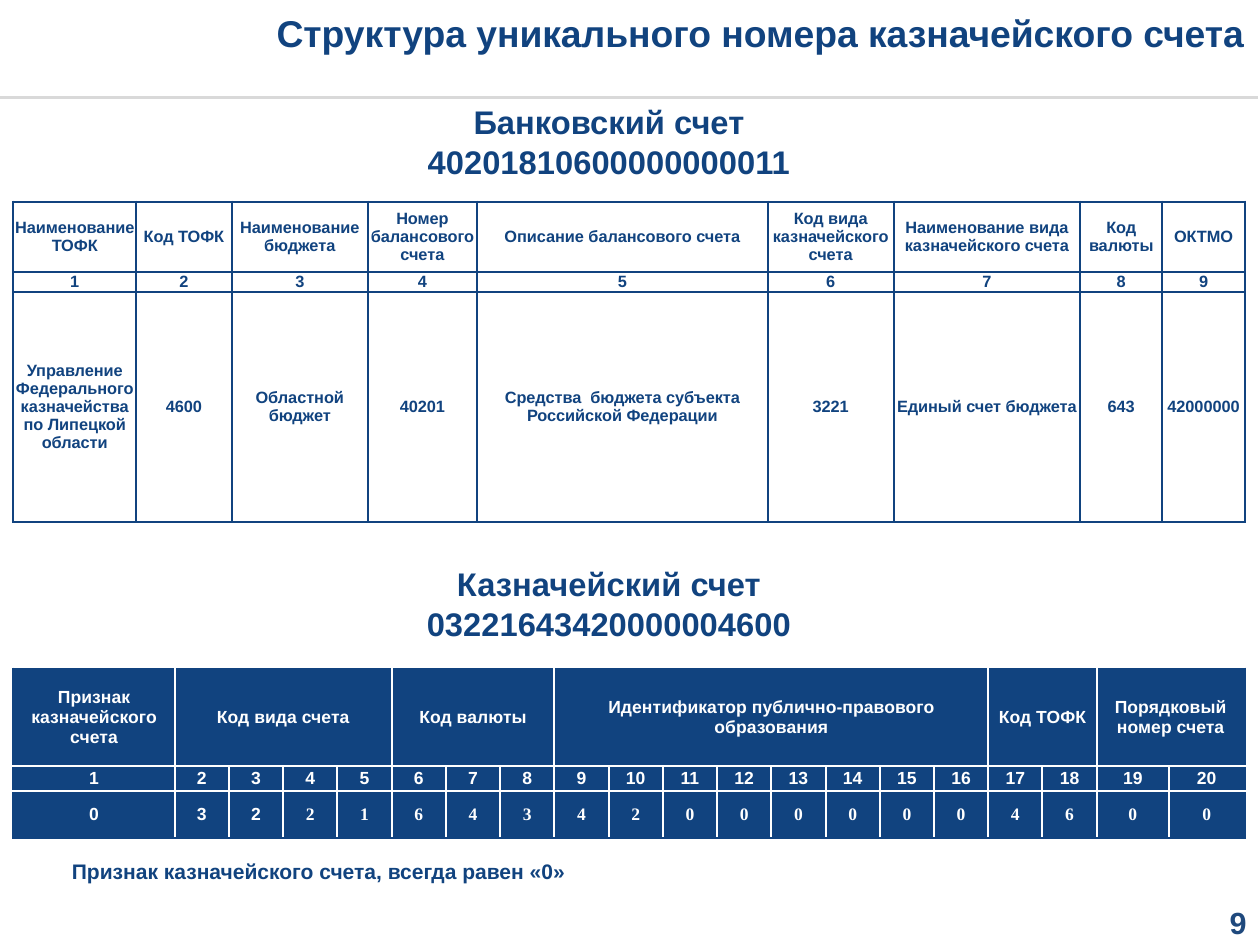
"""Build the slide on the structure of a treasury account number."""
from lxml.etree import SubElement
from pptx import Presentation
from pptx.dml.color import RGBColor
from pptx.enum.shapes import MSO_CONNECTOR
from pptx.enum.text import MSO_ANCHOR, PP_ALIGN
from pptx.oxml.ns import qn
from pptx.util import Inches, Pt

NAVY = RGBColor(0x11, 0x43, 0x7F)
PAGE_BLUE = RGBColor(0x1F, 0x49, 0x7D)
RULE_GREY = RGBColor(0xD9, 0xD9, 0xD9)
WHITE = RGBColor(0xFF, 0xFF, 0xFF)

SLIDE_WIDTH = 7.5
SLIDE_HEIGHT = SLIDE_WIDTH * 3 / 4
TABLE_LEFT, TABLE_WIDTH = 0.08, 7.33

BANK_WIDTHS = [0.73, 0.57, 0.81, 0.65, 1.73, 0.75, 1.11, 0.49, 0.49]
BANK_ROWS = [
    ["Наименование\nТОФК", "Код ТОФК", "Наименование\nбюджета",
     "Номер балансового\nсчета", "Описание балансового счета",
     "Код вида казначейского счета", "Наименование вида казначейского счета",
     "Код валюты", "ОКТМО"],
    [str(number) for number in range(1, 10)],
    ["Управление Федерального казначейства\nпо Липецкой области", "4600",
     "Областной бюджет", "40201",
     "Средства  бюджета субъекта Российской Федерации", "3221",
     "Единый счет бюджета", "643", "42000000"],
]

DIGIT_WIDTH = (TABLE_WIDTH - 0.96 - 0.43 - 0.45) / 17
TREASURY_WIDTHS = [0.96] + [DIGIT_WIDTH] * 17 + [0.43, 0.45]
TREASURY_GROUPS = [
    ("Признак казначейского счета", 1),
    ("Код вида счета", 4),
    ("Код валюты", 3),
    ("Идентификатор публично-правового образования", 8),
    ("Код ТОФК", 2),
    ("Порядковый номер счета", 2),
]
ACCOUNT_NUMBER = "03221643420000004600"


def format_text(frame, size, color, align, font="Arial"):
    """Give every paragraph one alignment and every run one bold font."""
    for paragraph in frame.paragraphs:
        paragraph.alignment = align
        for run in paragraph.runs:
            run.font.name = font
            run.font.size = Pt(size)
            run.font.bold = True
            run.font.color.rgb = color


def clear_insets(frame):
    """Remove the inner margins of a text frame or cell."""
    frame.margin_left = frame.margin_right = 0
    frame.margin_top = frame.margin_bottom = 0


def add_title(slide, text):
    """Place the slide title in its placeholder."""
    title = slide.shapes.title
    title.left, title.top = Inches(1.58), Inches(0.06)
    title.width, title.height = Inches(5.83), Inches(0.49)
    frame = title.text_frame
    frame.text = text
    frame.vertical_anchor = MSO_ANCHOR.TOP
    clear_insets(frame)
    format_text(frame, 16, NAVY, PP_ALIGN.RIGHT)


def add_label(slide, text, box, size, align, color=NAVY):
    """Add a wrapped text box and return its frame."""
    frame = slide.shapes.add_textbox(*map(Inches, box)).text_frame
    frame.word_wrap = True
    frame.text = text
    format_text(frame, size, color, align)
    return frame


def add_rule(slide, top):
    """Draw the thin grey line under the title."""
    rule = slide.shapes.add_connector(
        MSO_CONNECTOR.STRAIGHT, 0, Inches(top), Inches(7.49), Inches(top))
    rule.line.color.rgb = RULE_GREY
    rule.line.width = Pt(1)
    SubElement(rule._element.spPr, qn("a:effectLst"))


def set_borders(cell, colors):
    """Draw the left, right, top and bottom borders of a cell."""
    properties = cell._tc.get_or_add_tcPr()
    for side, color in zip("LRTB", colors):
        line = SubElement(properties, qn(f"a:ln{side}"), w=str(Pt(1)))
        fill = SubElement(line, qn("a:solidFill"))
        SubElement(fill, qn("a:srgbClr"), val=str(color))


def add_grid(slide, top, widths, heights):
    """Add a table with the given column widths and row heights."""
    grid = slide.shapes.add_table(
        len(heights), len(widths), Inches(TABLE_LEFT), Inches(top),
        Inches(TABLE_WIDTH), Inches(sum(heights))).table
    for column, width in zip(grid.columns, widths):
        column.width = Inches(width)
    for row, height in zip(grid.rows, heights):
        row.height = Inches(height)
    return grid


def fill_cell(cell, text, size, color, font="Arial"):
    """Write centred text into a cell without margins."""
    cell.text_frame.text = text
    cell.vertical_anchor = MSO_ANCHOR.MIDDLE
    clear_insets(cell)
    format_text(cell.text_frame, size, color, PP_ALIGN.CENTER, font)


def add_bank_table(slide):
    """Add the outlined table that describes the bank account."""
    grid = add_grid(slide, 1.2, BANK_WIDTHS, [0.42, 0.11, 1.37])
    for row, texts in enumerate(BANK_ROWS):
        for column, text in enumerate(texts):
            cell = grid.cell(row, column)
            fill_cell(cell, text, 7, NAVY)
            set_borders(cell, [NAVY] * 4)
            cell.fill.background()


def add_treasury_table(slide):
    """Add the filled table that splits the treasury account into digits."""
    grid = add_grid(slide, 3.98, TREASURY_WIDTHS, [0.58, 0.15, 0.28])
    start = 0
    for text, span in TREASURY_GROUPS:
        if span > 1:
            grid.cell(0, start).merge(grid.cell(0, start + span - 1))
        fill_cell(grid.cell(0, start), text, 7.5, WHITE)
        start += span
    for column, digit in enumerate(ACCOUNT_NUMBER):
        fill_cell(grid.cell(1, column), str(column + 1), 7.5, WHITE)
        font = "Arial" if column < 3 else "Times New Roman"
        fill_cell(grid.cell(2, column), digit, 7.5, WHITE, font)
    for row in range(3):
        for column in range(start):
            cell = grid.cell(row, column)
            outer = (column == 0, column + cell.span_width == start,
                     row == 0, row == 2)
            set_borders(cell, [NAVY if edge else WHITE for edge in outer])
            cell.fill.solid()
            cell.fill.fore_color.rgb = NAVY


def main():
    """Build and save the slide."""
    deck = Presentation()
    deck.slide_width = Inches(SLIDE_WIDTH)
    deck.slide_height = Inches(SLIDE_HEIGHT)
    slide = deck.slides.add_slide(deck.slide_layouts[5])
    add_rule(slide, 0.58)
    page = add_label(slide, "9", (5.69, 5.38, 1.73, 0.22), 13.1,
                     PP_ALIGN.RIGHT, PAGE_BLUE)
    clear_insets(page)
    add_title(slide, "Структура уникального номера казначейского счета")
    add_bank_table(slide)
    add_treasury_table(slide)
    add_label(slide, f"Казначейский счет {ACCOUNT_NUMBER}",
              (1.75, 3.31, 3.75, 0.57), 14, PP_ALIGN.CENTER)
    add_label(slide, "Банковский счет 40201810600000000011",
              (1.75, 0.56, 3.75, 0.57), 14, PP_ALIGN.CENTER)
    add_label(slide, "Признак казначейского счета, всегда равен «0»",
              (0.33, 5.06, 6.5, 0.25), 9, PP_ALIGN.LEFT)
    deck.save("out.pptx")


if __name__ == "__main__":
    main()
